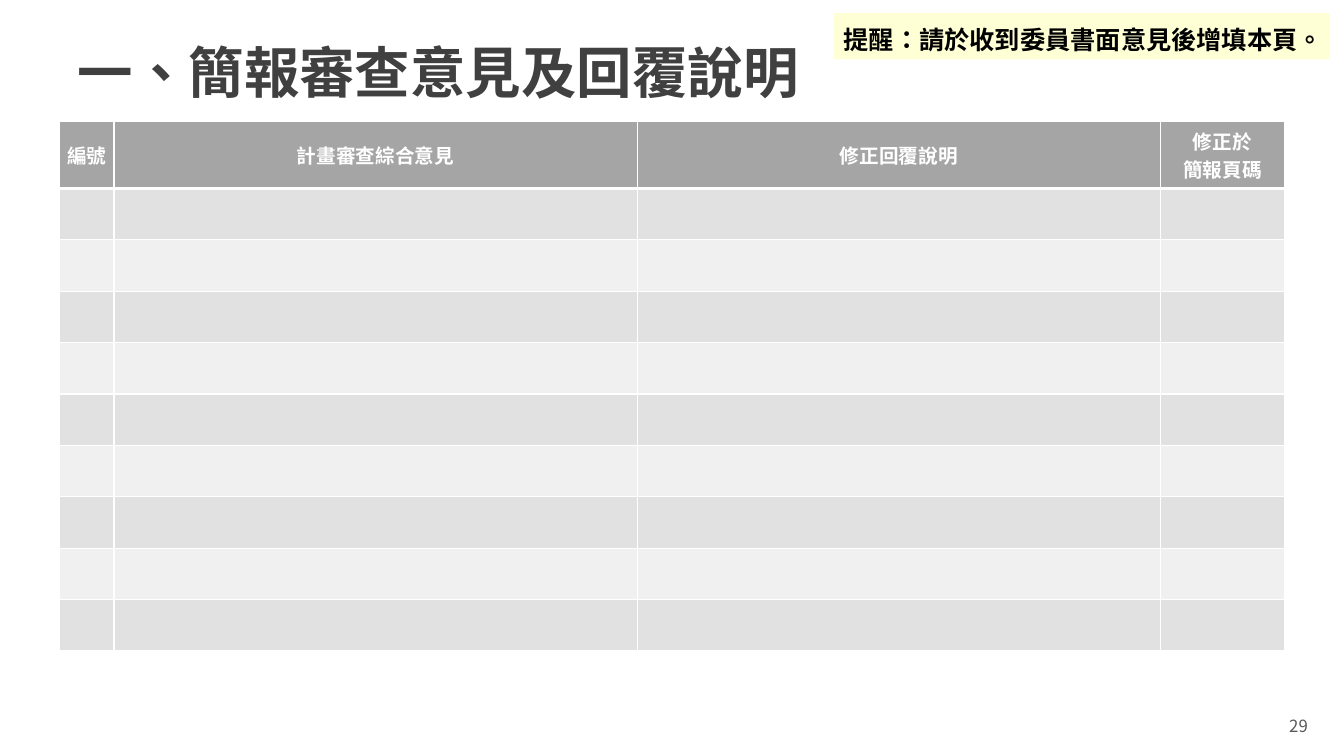
from lxml.etree import SubElement
from pptx import Presentation
from pptx.dml.color import RGBColor
from pptx.enum.shapes import MSO_SHAPE
from pptx.enum.text import MSO_ANCHOR, MSO_AUTO_SIZE, PP_ALIGN
from pptx.oxml.ns import qn
from pptx.util import Inches, Pt

FONT = "Noto Sans CJK SC"
LANGUAGE = "zh-TW"
WHITE = RGBColor(0xFF, 0xFF, 0xFF)
BLACK = RGBColor(0x00, 0x00, 0x00)
TITLE_GRAY = RGBColor(0x40, 0x40, 0x40)
NUMBER_GRAY = RGBColor(0x59, 0x59, 0x59)
HEADER_GRAY = RGBColor(0xA5, 0xA5, 0xA5)
BAND_GRAYS = (RGBColor(0xF0, 0xF0, 0xF0), RGBColor(0xE1, 0xE1, 0xE1))
NOTE_YELLOW = RGBColor(0xFF, 0xFF, 0xCC)

HEADERS = (("編號",), ("計畫審查綜合意見",), ("修正回覆說明",), ("修正於", "簡報頁碼"))
COLUMN_WIDTHS = (0.54, 5.19, 5.19, 1.23)
HEADER_HEIGHT = 0.67
ROW_HEIGHT = 0.51
BODY_ROWS = 9


def add_text(paragraph, text, size, color, bold=False, align=PP_ALIGN.LEFT, spacing=1.0):
    """Add one formatted run and set its paragraph's layout."""
    paragraph.alignment = align
    paragraph.line_spacing = spacing
    run = paragraph.add_run()
    run.text = text
    run.font.size = Pt(size)
    run.font.bold = bold
    run.font.color.rgb = color
    run.font.name = FONT
    run.font._element.set("lang", LANGUAGE)
    SubElement(run.font._element, qn("a:ea"), typeface=FONT)


def place(shape, box):
    """Move and size a shape to a box given in inches."""
    shape.left, shape.top, shape.width, shape.height = map(Inches, box)


def set_borders(cell, bottom_width):
    """Draw white cell borders with the given bottom width in points."""
    properties = cell._tc.get_or_add_tcPr()
    widths = {"a:lnL": 1, "a:lnR": 1, "a:lnT": 1, "a:lnB": bottom_width}
    for index, (tag, width) in enumerate(widths.items()):
        line = SubElement(properties, qn(tag), w=str(Pt(width)))
        fill = SubElement(line, qn("a:solidFill"))
        SubElement(fill, qn("a:srgbClr"), val=str(WHITE))
        properties.insert(index, line)


def add_title(slide, box):
    """Format the title placeholder inside the box."""
    title = slide.shapes.title
    place(title, box)
    frame = title.text_frame
    frame.word_wrap = True
    frame.auto_size = MSO_AUTO_SIZE.NONE
    frame.vertical_anchor = MSO_ANCHOR.MIDDLE
    add_text(frame.paragraphs[0], "一、簡報審查意見及回覆說明", 39.6, TITLE_GRAY, True, spacing=0.9)


def add_page_number(slide, box):
    """Add the right-aligned page number."""
    frame = slide.shapes.add_textbox(*map(Inches, box)).text_frame
    frame.word_wrap = True
    frame.vertical_anchor = MSO_ANCHOR.MIDDLE
    add_text(frame.paragraphs[0], "29", 12, NUMBER_GRAY, align=PP_ALIGN.RIGHT)


def fill_header_cell(cell, lines):
    """Write the centred lines of one column heading."""
    cell.vertical_anchor = MSO_ANCHOR.MIDDLE
    cell.margin_left = cell.margin_right = Inches(0.05)
    cell.margin_top = cell.margin_bottom = Inches(0.05)
    frame = cell.text_frame
    for index, text in enumerate(lines):
        paragraph = frame.add_paragraph() if index else frame.paragraphs[0]
        add_text(paragraph, text, 14, WHITE, True, PP_ALIGN.CENTER)


def add_review_table(slide, left, top):
    """Add the review table with headings and empty banded rows."""
    height = HEADER_HEIGHT + BODY_ROWS * ROW_HEIGHT
    box = (left, top, sum(COLUMN_WIDTHS), height)
    table = slide.shapes.add_table(BODY_ROWS + 1, len(HEADERS), *map(Inches, box)).table
    for column, width in zip(table.columns, COLUMN_WIDTHS):
        column.width = Inches(width)
    for row_index, row in enumerate(table.rows):
        is_header = row_index == 0
        row.height = Inches(HEADER_HEIGHT if is_header else ROW_HEIGHT)
        for cell, lines in zip(row.cells, HEADERS):
            cell.fill.solid()
            cell.fill.fore_color.rgb = HEADER_GRAY if is_header else BAND_GRAYS[row_index % 2]
            set_borders(cell, 3 if is_header else 1)
            if is_header:
                fill_header_cell(cell, lines)


def add_reminder(slide, box):
    """Add the translucent yellow reminder."""
    reminder = slide.shapes.add_shape(MSO_SHAPE.RECTANGLE, *map(Inches, box))
    reminder.shadow.inherit = False
    reminder.line.fill.background()
    reminder.fill.solid()
    reminder.fill.fore_color.rgb = NOTE_YELLOW
    color = reminder._element.spPr.find(qn("a:solidFill")).find(qn("a:srgbClr"))
    SubElement(color, qn("a:alpha"), val="80000")
    frame = reminder.text_frame
    frame.word_wrap = True
    frame.auto_size = MSO_AUTO_SIZE.SHAPE_TO_FIT_TEXT
    frame.vertical_anchor = MSO_ANCHOR.TOP
    add_text(frame.paragraphs[0], "提醒：請於收到委員書面意見後增填本頁。", 18, BLACK, True, spacing=1.2)


def main():
    """Build and save the review response slide."""
    presentation = Presentation()
    presentation.slide_width = Inches(13.33)
    presentation.slide_height = Inches(7.5)
    slide = presentation.slides.add_slide(presentation.slide_layouts[5])
    add_title(slide, (0.67, 0.38, 12, 0.73))
    add_page_number(slide, (10.07, 7.08, 3, 0.24))
    add_review_table(slide, 0.59, 1.2)
    add_reminder(slide, (8.27, 0.13, 4.92, 0.46))
    presentation.save("out.pptx")


if __name__ == "__main__":
    main()
